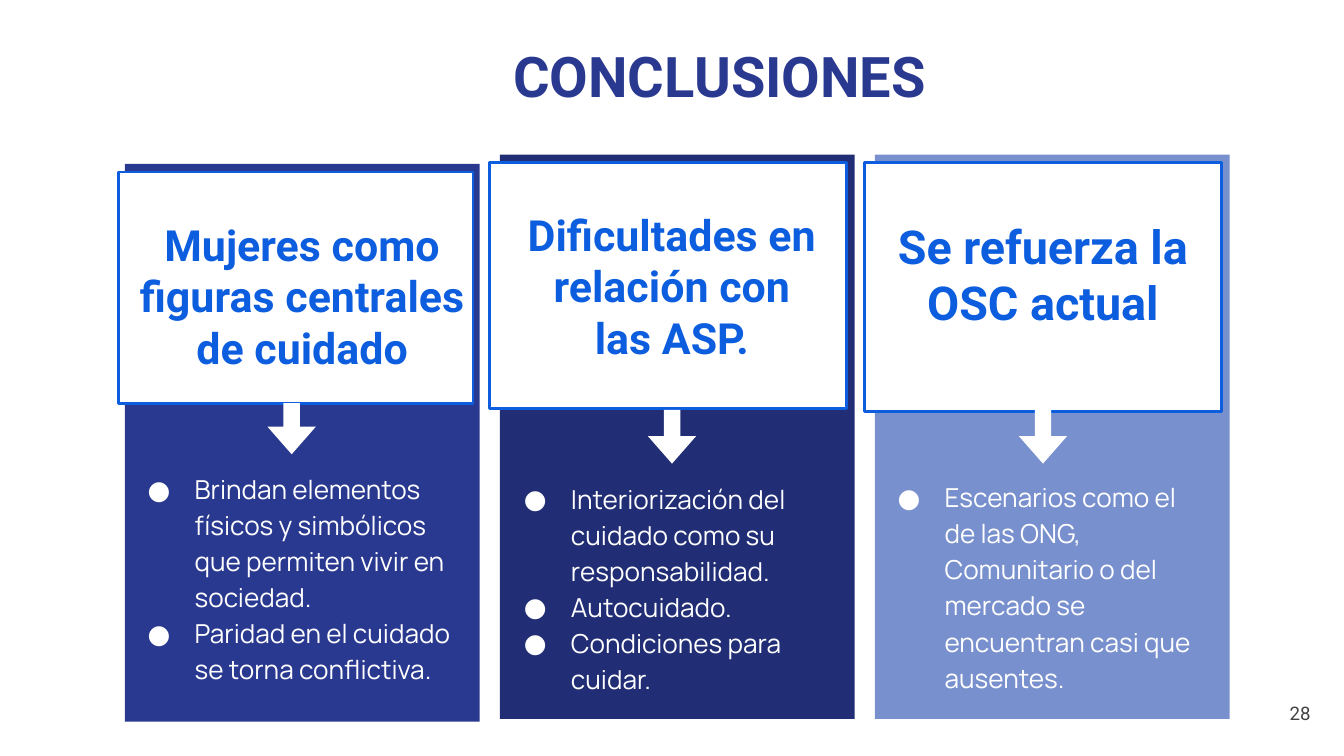
from pptx import Presentation
from pptx.dml.color import RGBColor
from pptx.enum.shapes import MSO_SHAPE as SHAPE
from pptx.enum.text import MSO_ANCHOR as ANCHOR, PP_ALIGN as ALIGN
from pptx.oxml import parse_xml
from pptx.oxml.ns import nsdecls
from pptx.util import Inches, Pt

NAVY, BLUE, WHITE, GREY = "2A3990", "0D5DDF", "FFFFFF", "434343"
COLUMN_W = 2.64

# Column box, fill, heading and bullets; the inner boxes (x, y, w, h) are
# measured from the top left corner of the column.
COLUMNS = [
    dict(box=(0.93, 1.22, COLUMN_W, 4.15), fill=NAVY,
         card=(-0.05, 0.06, 2.64, 1.72),
         heading="Mujeres como figuras centrales de cuidado",
         heading_box=(0, 0.06, 2.64, 1.84), heading_size=23,
         arrow=(1.05, 1.79, 0.38, 0.36),
         bullets=["Brindan elementos físicos y simbólicos que permiten vivir en sociedad.",
                  "Paridad en el cuidado se torna conflictiva."],
         bullets_box=(-0.08, 2.17, COLUMN_W, 1.7)),
    dict(box=(3.72, 1.15, COLUMN_W, 4.2), fill="212D74",
         card=(-0.08, 0.06, 2.66, 1.83),
         heading="Dificultades en relación con las ASP.",
         heading_box=(0.07, 0.16, 2.42, 1.63), heading_size=23,
         arrow=(1.08, 1.92, 0.4, 0.36),
         bullets=["Interiorización del cuidado como su responsabilidad.",
                  "Autocuidado.", "Condiciones para cuidar."],
         bullets_box=(-0.07, 2.31, COLUMN_W, 1.63)),
    dict(box=(6.51, 1.15, COLUMN_W, 4.2), fill="7890CD",
         card=(-0.08, 0.06, 2.66, 1.85),
         heading="Se refuerza la OSC actual",
         heading_box=(0.07, 0.06, 2.36, 1.65), heading_size=25,
         arrow=(1.05, 1.92, 0.4, 0.36),
         bullets=["Escenarios como el de las ONG, Comunitario o del mercado "
                  "se encuentran casi que ausentes."],
         bullets_box=(-0.08, 2.3, COLUMN_W, 1.12)),
]


def rgb(color):
    return RGBColor.from_string(color)


def inches(box):
    return [Inches(v) for v in box]


def add_block(shapes, kind, box, fill, line=None):
    sp = shapes.add_shape(kind, *inches(box))
    sp.shadow.inherit = False
    sp.fill.solid()
    sp.fill.fore_color.rgb = rgb(fill)
    if line:
        sp.line.color.rgb = rgb(line)
        sp.line.width = Pt(1.5)
    else:
        sp.line.fill.background()
    return sp


def add_text(shapes, box, lines, size, color, font="Roboto", bold=False,
             align=ALIGN.CENTER, anchor=ANCHOR.MIDDLE):
    tf = shapes.add_textbox(*inches(box)).text_frame
    tf.word_wrap = True
    tf.vertical_anchor = anchor
    tf.margin_left = tf.margin_right = tf.margin_top = tf.margin_bottom = Inches(0.1)
    tf.text = "\n".join(lines)
    for p in tf.paragraphs:
        p.alignment = align
        p.font.size = Pt(size)
        p.font.name = font
        p.font.bold = bold
        p.font.color.rgb = rgb(color)
    return tf


def add_bullets(shapes, box, lines):
    tf = add_text(shapes, box, lines, 14, WHITE, "Manrope",
                  align=ALIGN.LEFT, anchor=ANCHOR.TOP)
    for p in tf.paragraphs:
        p.line_spacing = 1.15
        pPr = p._p.get_or_add_pPr()
        pPr.set("marL", str(Inches(0.5)))
        pPr.set("indent", str(Inches(-0.35)))
        defaults = pPr.find("{*}defRPr")
        ns = nsdecls("a")
        for xml in (f'<a:buClr {ns}><a:srgbClr val="{WHITE}"/></a:buClr>',
                    f'<a:buFont {ns} typeface="Manrope"/>',
                    f'<a:buChar {ns} char="●"/>'):
            defaults.addprevious(parse_xml(xml))


def add_column(slide, box, fill, card, heading, heading_box, heading_size,
               arrow, bullets, bullets_box):
    left, top = box[:2]

    def inside(part):
        x, y, w, h = part
        return left + x, top + y, w, h

    shapes = slide.shapes.add_group_shape().shapes
    add_block(shapes, SHAPE.RECTANGLE, box, fill)
    add_block(shapes, SHAPE.RECTANGLE, inside(card), WHITE, BLUE)
    add_text(shapes, inside(heading_box), [heading], heading_size, BLUE, bold=True)
    sp = add_block(shapes, SHAPE.RIGHT_ARROW, inside(arrow), WHITE)
    sp.rotation = 90
    sp.adjustments[0], sp.adjustments[1] = 0.34, 0.57
    add_bullets(shapes, inside(bullets_box), bullets)


def add_title(slide, box):
    add_text(slide.shapes, box, ["CONCLUSIONES"], 30, NAVY, bold=True,
             anchor=ANCHOR.TOP)


def add_page_number(slide, box):
    add_text(slide.shapes, box, ["28"], 10, GREY, align=ALIGN.RIGHT)


def main():
    prs = Presentation()
    prs.slide_width = Inches(10)
    prs.slide_height = prs.slide_width * 9 // 16
    s = prs.slides.add_slide(prs.slide_layouts[6])
    add_page_number(s, (9.25, 5.09, 0.6, 0.43))
    for column in COLUMNS:
        add_column(s, **column)
    add_title(s, (2.83, 0.21, 5.05, 1.21))
    prs.save("out.pptx")


if __name__ == "__main__":
    main()
